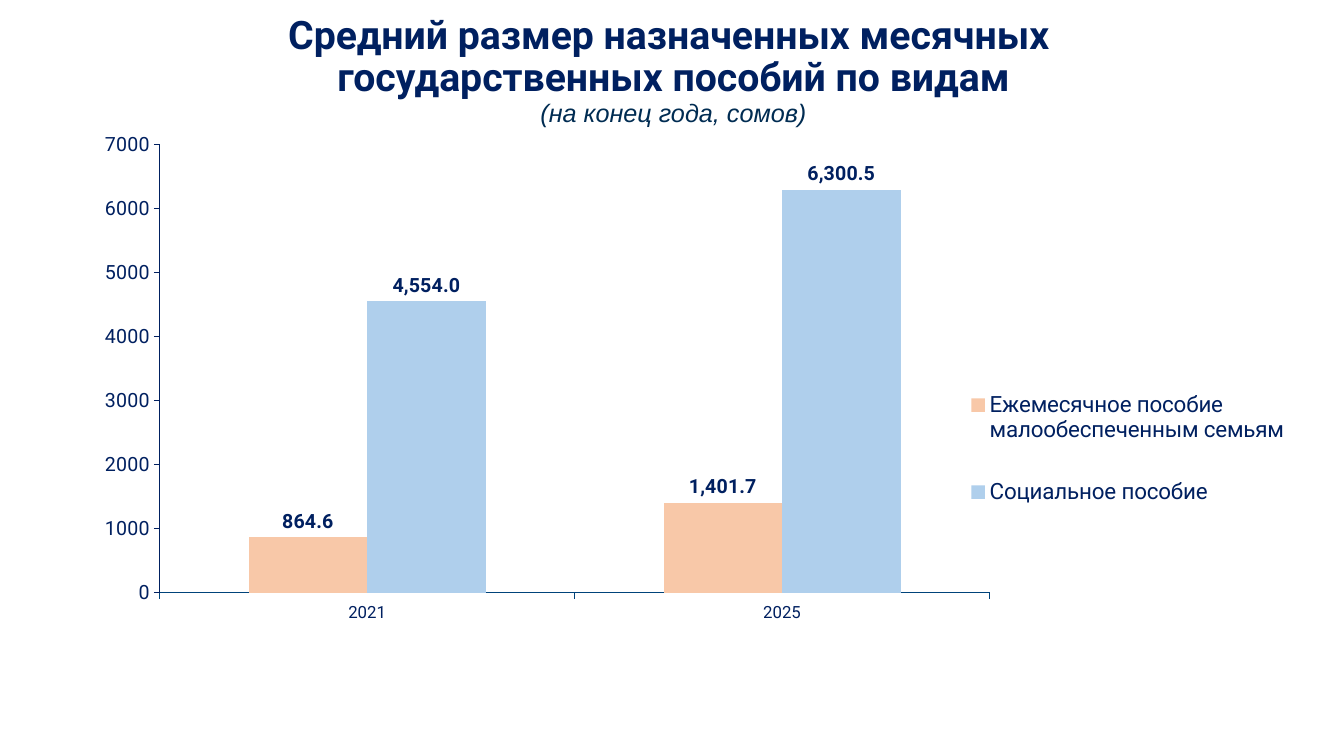
from dataclasses import dataclass

from lxml import etree
from pptx import Presentation
from pptx import util as u
from pptx.chart.data import CategoryChartData
from pptx.dml.color import RGBColor
from pptx.enum import chart as charts, text
from pptx.oxml.ns import qn

COLORS = {
    "navy": "002060",
    "subtitle": "002C52",
    "axis": "00437A",
    "family": "F8C8A8",
    "social": "AFCFEC",
    "white": "FFFFFF",
}


@dataclass(frozen=True)
class TitleLine:
    wording: str
    size: int
    font: str
    color: str
    bold: bool
    italic: bool


@dataclass(frozen=True)
class Benefit:
    name: str
    amounts: tuple[float, ...]
    color: str


TITLE_LINES = [
    TitleLine("Средний размер назначенных месячных ", 28, "Roboto", "navy", True, False),
    TitleLine("государственных пособий по видам", 28, "Roboto", "navy", True, False),
    TitleLine("(на конец года, сомов)", 18, "Arial", "subtitle", False, True),
]
YEARS = ["2021", "2025"]
BENEFITS = [
    Benefit("Ежемесячное пособие малообеспеченным семьям", (864.6, 1401.7), "family"),
    Benefit("Социальное пособие", (4554, 6300.5), "social"),
]


def rgb(color: str) -> RGBColor:
    return RGBColor.from_string(COLORS[color])


def style_font(font, size: int, color: str, name: str = "Roboto",
               bold: bool = False, italic: bool = False) -> None:
    font.size, font.name, font.bold, font.italic = u.Pt(size), name, bold, italic
    font.color.rgb = rgb(color)


def place_manually(element, position: int, inner: bool, **fractions: float) -> None:
    """Give a chart part a layout in fractions of the chart area."""
    for old in element.findall(qn("c:layout")):
        element.remove(old)
    layout = etree.Element(qn("c:layout"))
    manual = etree.SubElement(layout, qn("c:manualLayout"))
    settings = {"layoutTarget": "inner"} if inner else {}
    settings |= {"xMode": "edge", "yMode": "edge"} | fractions
    for tag, value in settings.items():
        etree.SubElement(manual, qn(f"c:{tag}")).set("val", str(value))
    element.insert(position, layout)


def add_title(page) -> None:
    title = page.shapes.title
    title.left, title.top = u.Inches(1.68), u.Inches(0.16)
    title.width, title.height = u.Inches(10), u.Inches(1.1)
    frame = title.text_frame
    frame.auto_size = text.MSO_AUTO_SIZE.NONE
    frame.word_wrap = True
    frame.vertical_anchor = text.MSO_ANCHOR.MIDDLE
    para = frame.paragraphs[0]
    para.text = "\v".join(line.wording for line in TITLE_LINES)
    para.alignment = text.PP_ALIGN.CENTER
    para.line_spacing = 0.9
    for span, line in zip(para.runs, TITLE_LINES):
        style_font(span.font, line.size, line.color, line.font, line.bold, line.italic)


def style_axis(axis, size: int, color: str) -> None:
    axis.has_major_gridlines = False
    axis.major_tick_mark = charts.XL_TICK_MARK.OUTSIDE
    axis.minor_tick_mark = charts.XL_TICK_MARK.NONE
    axis.format.line.color.rgb = rgb(color)
    axis.format.line.width = u.Pt(0.75)
    style_font(axis.tick_labels.font, size, "navy")


def style_series(series, benefit: Benefit) -> None:
    series.format.fill.solid()
    series.format.fill.fore_color.rgb = rgb(benefit.color)
    series.invert_if_negative = False
    labels = series.data_labels
    labels.show_value = True
    labels.number_format = "#,##0.0"
    labels.number_format_is_linked = False
    labels.position = charts.XL_LABEL_POSITION.OUTSIDE_END
    style_font(labels.font, 14, "navy", bold=True)


def add_benefit_chart(page) -> None:
    data = CategoryChartData(number_format="#,##0.0")
    data.categories = YEARS
    for benefit in BENEFITS:
        data.add_series(benefit.name, benefit.amounts)
    chart = page.shapes.add_chart(
        charts.XL_CHART_TYPE.COLUMN_CLUSTERED,
        u.Inches(0.79), u.Inches(1.26), u.Inches(12.23), u.Inches(5.41), data,
    ).chart
    chart.has_title = False
    chart.font.name, chart.font.size = "Roboto", u.Pt(10)

    plot = chart.plots[0]
    plot.gap_width, plot.overlap = 150, 0
    plot.vary_by_categories = False
    for series, benefit in zip(plot.series, BENEFITS):
        style_series(series, benefit)

    style_axis(chart.category_axis, 12, "axis")
    amounts = chart.value_axis
    style_axis(amounts, 14, "navy")
    amounts.minimum_scale, amounts.maximum_scale, amounts.major_unit = 0, 7000, 1000
    amounts.tick_labels.number_format = "0"
    amounts.tick_labels.number_format_is_linked = False

    chart.has_legend = True
    legend = chart.legend
    legend.position = charts.XL_LEGEND_POSITION.RIGHT
    legend.include_in_layout = False
    style_font(legend.font, 16, "navy")

    area = chart.plots[0]._element.getparent()
    place_manually(area, 0, True, x=0.065, y=0.033, w=0.673, h=0.821)
    place_manually(legend._element, 1, False, x=0.71, y=0.42, w=0.28, h=0.34)


def main() -> None:
    deck = Presentation()
    deck.slide_width, deck.slide_height = u.Inches(13.33), u.Inches(7.5)
    page = deck.slides.add_slide(deck.slide_layouts[5])
    page.background.fill.solid()
    page.background.fill.fore_color.rgb = rgb("white")
    add_title(page)
    add_benefit_chart(page)
    deck.save("out.pptx")


if __name__ == "__main__":
    main()
